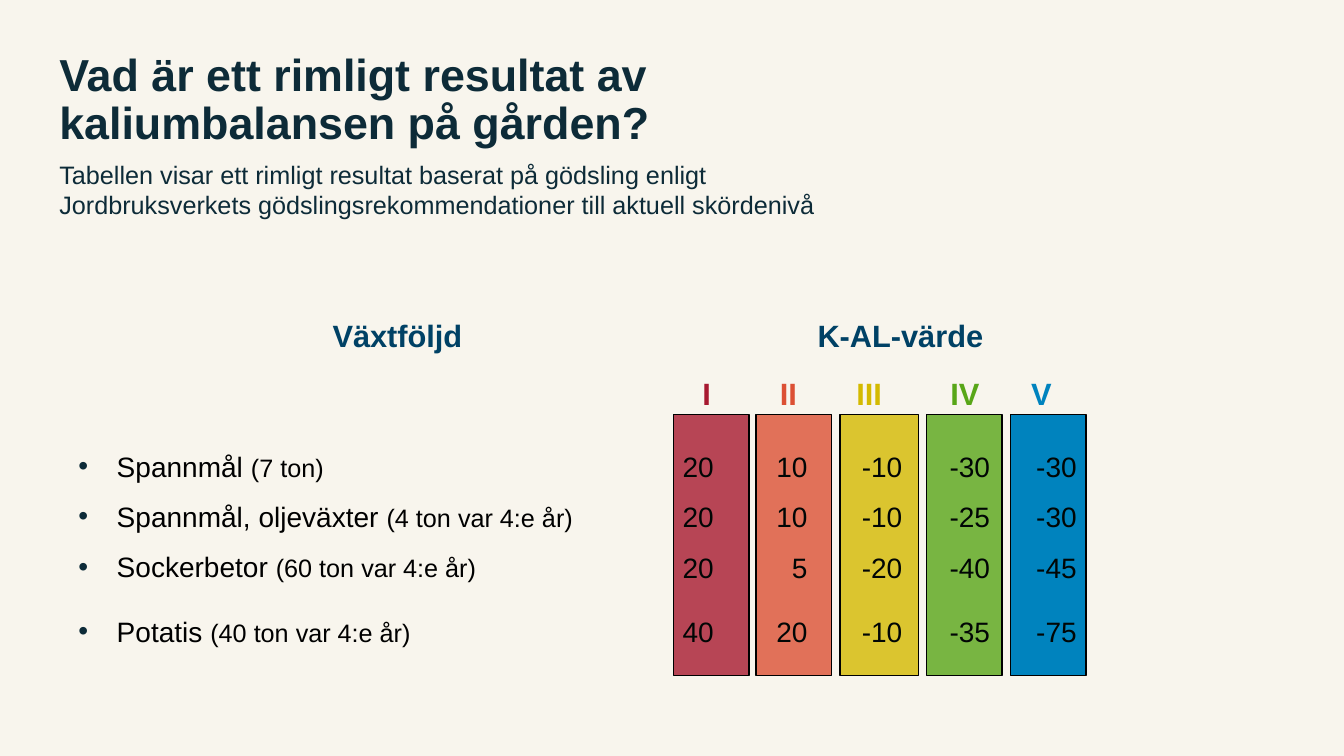
from lxml.etree import SubElement
from pptx import Presentation
from pptx.dml.color import RGBColor
from pptx.enum.shapes import MSO_SHAPE as Shape
from pptx.enum.text import MSO_ANCHOR as Anchor, PP_ALIGN as Align
from pptx.oxml.ns import qn
from pptx.util import Inches, Pt

TITLE = "Vad är ett rimligt resultat av kaliumbalansen på gården?"
SUBTITLE = ("Tabellen visar ett rimligt resultat baserat på gödsling enligt "
            "Jordbruksverkets gödslingsrekommendationer till aktuell skördenivå")
ROTATION_HEADING = "Växtföljd"
CLASS_HEADING = "K-AL-värde"
ROTATIONS = [
    ("Spannmål ", "(7 ton)"),
    ("Spannmål, oljeväxter ", "(4 ton var 4:e år)"),
    ("Sockerbetor ", "(60 ton var 4:e år)"),
    ("Potatis ", "(40 ton var 4:e år)"),
]
# numeral, colour, opacity, left, width, numeral centre, right inset, values
CLASSES = [
    ("I", "A71930", 80, 6.68, 0.75, 7.01, 0.35, ("20", "20", "20", "40")),
    ("II", "DC5034", 80, 7.5, 0.75, 7.82, 0.24, ("10", "10", "5", "20")),
    ("III", "D4BA00", 80, 8.33, 0.78, 8.62, 0.16, ("-10", "-10", "-20", "-10")),
    ("IV", "58A618", 80, 9.19, 0.75, 9.57, 0.12, ("-30", "-25", "-40", "-35")),
    ("V", "0083BE", 100, 10.02, 0.75, 10.33, 0.09, ("-30", "-30", "-45", "-75")),
]
INK, HEADING, BLACK, VALUE = "0D2B38", "004165", "000000", "010605"
BAR_TOP, BAR_HEIGHT = 4.11, 2.59
ROWS_TOP = 4.29
ROW_GAPS = [0, 0, 0, 10]
NUMERAL_WIDTH = 0.7


def rgb(code):
    return RGBColor.from_string(code)


def add_run(paragraph, text, size, color, bold=False):
    run = paragraph.add_run()
    run.text = text
    run.font.name = "Arial"
    run.font.size = Pt(size)
    run.font.bold = bold
    run.font.color.rgb = rgb(color)


def add_box(slide, left, top, width, height, anchor=Anchor.TOP):
    frame = slide.shapes.add_textbox(
        Inches(left), Inches(top), Inches(width), Inches(height)).text_frame
    frame.word_wrap = True
    frame.vertical_anchor = anchor
    return frame


def add_line(slide, box, text, size, color, bold=False, spacing=1.0,
             align=Align.LEFT, anchor=Anchor.TOP):
    paragraph = add_box(slide, *box, anchor).paragraphs[0]
    paragraph.line_spacing = spacing
    paragraph.alignment = align
    add_run(paragraph, text, size, color, bold)


def add_rows(frame):
    for index, gap in enumerate(ROW_GAPS):
        row = frame.add_paragraph() if index else frame.paragraphs[0]
        row.line_spacing = 1.5
        if gap:
            row.space_before = Pt(gap)
        yield row


def add_bullet(paragraph):
    properties = paragraph._p.get_or_add_pPr()
    properties.set("marL", str(Inches(0.38)))
    properties.set("indent", str(-Inches(0.38)))
    color = SubElement(properties, qn("a:buClr"))
    SubElement(color, qn("a:srgbClr"), val=INK)
    SubElement(properties, qn("a:buFont"), typeface="Arial")
    SubElement(properties, qn("a:buChar"), char="•")


def add_class(slide, numeral, color, opacity, left, width, centre, inset, values):
    bar = slide.shapes.add_shape(
        Shape.RECTANGLE, Inches(left), Inches(BAR_TOP), Inches(width), Inches(BAR_HEIGHT))
    bar.shadow.inherit = False
    bar.fill.solid()
    bar.fill.fore_color.rgb = rgb(color)
    if opacity < 100:
        fill = bar._element.spPr.find(qn("a:solidFill"))
        SubElement(fill[0], qn("a:alpha"), val=str(opacity * 1000))
    bar.line.color.rgb = rgb(BLACK)
    bar.line.width = Pt(1)
    frame = bar.text_frame
    frame.vertical_anchor = Anchor.TOP
    frame.margin_left = frame.margin_bottom = 0
    frame.margin_top = Inches(ROWS_TOP - BAR_TOP)
    frame.margin_right = Inches(inset)
    for row, value in zip(add_rows(frame), values):
        row.alignment = Align.RIGHT
        add_run(row, value, 20, VALUE)
    add_line(slide, (centre - NUMERAL_WIDTH / 2, 3.67, NUMERAL_WIDTH, 0.44),
             numeral, 22, color, True, align=Align.CENTER)


def main():
    deck = Presentation()
    deck.slide_width, deck.slide_height = Inches(13.33), Inches(7.5)
    slide = deck.slides.add_slide(deck.slide_layouts[6])
    slide.background.fill.solid()
    slide.background.fill.fore_color.rgb = rgb("F8F5ED")

    add_line(slide, (0.49, 0.37, 9.2, 1.16), TITLE, 32, INK, True, 0.9,
             anchor=Anchor.BOTTOM)
    add_line(slide, (0.49, 1.53, 8.52, 0.71), SUBTITLE, 18, INK)
    add_line(slide, (3.2, 2.91, 2.56, 0.59), ROTATION_HEADING, 22, HEADING, True, 1.5)
    add_line(slide, (6.92, 2.91, 4.02, 0.59), CLASS_HEADING, 22, HEADING, True, 1.5,
             Align.CENTER)

    rotations = add_box(slide, 0.68, ROWS_TOP - 0.05, 5.9, BAR_HEIGHT)
    for row, (crop, harvest) in zip(add_rows(rotations), ROTATIONS):
        add_bullet(row)
        add_run(row, crop, 20, BLACK)
        add_run(row, harvest, 18, BLACK)

    for soil_class in CLASSES:
        add_class(slide, *soil_class)
    deck.save("out.pptx")


if __name__ == "__main__":
    main()
